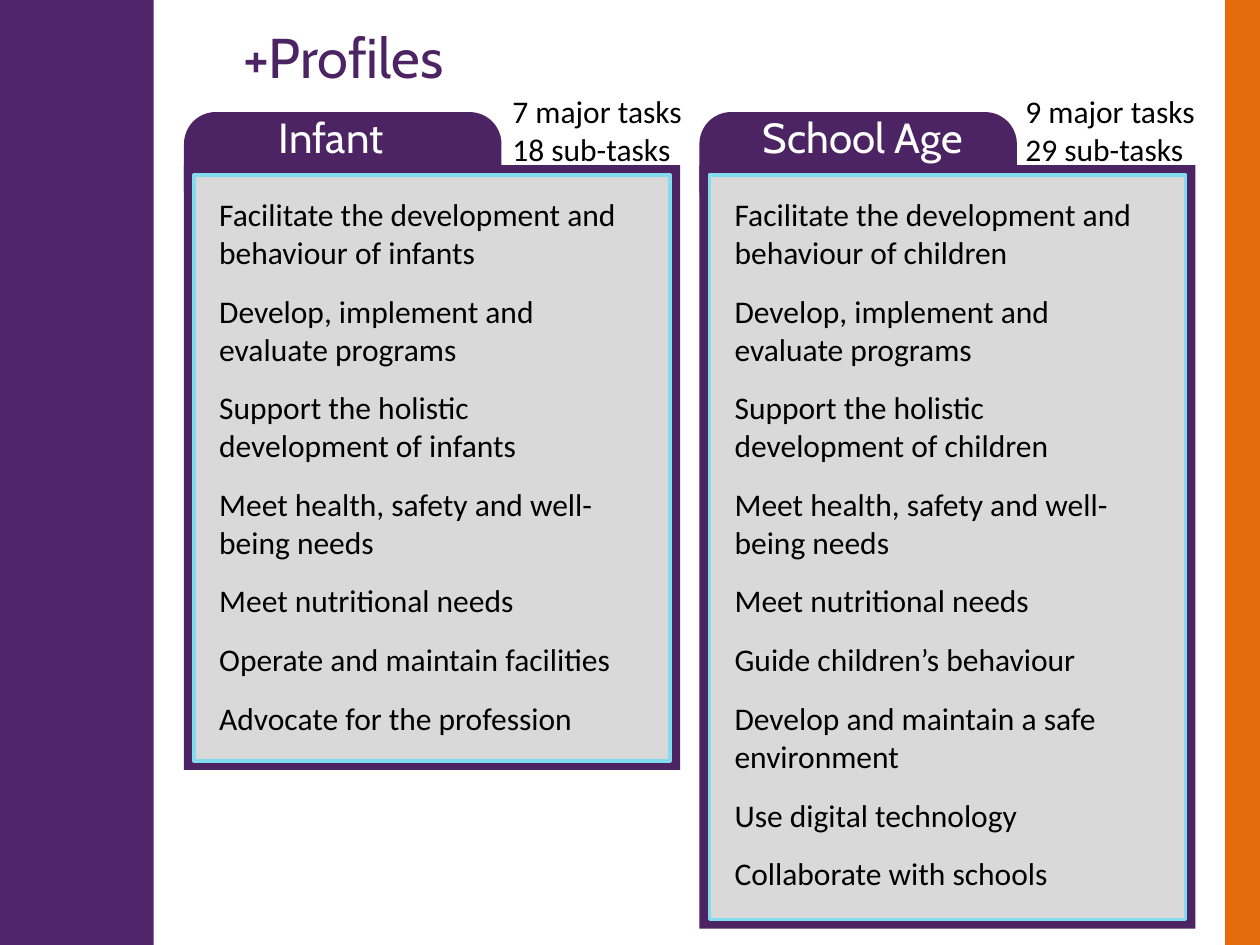
from dataclasses import dataclass

from pptx import Presentation
from pptx.dml.color import RGBColor as RGB
from pptx.enum.shapes import MSO_SHAPE as Kind
from pptx.enum.text import MSO_AUTO_SIZE as Fit, PP_ALIGN as Align
from pptx.util import Cm, Pt


@dataclass(frozen=True)
class Theme:
    plum: str = "4C2363"
    side: str = "512569"
    edge: str = "E46C0A"
    grey: str = "D9D9D9"
    aqua: str = "82DCEE"
    ink: str = "000000"
    white: str = "FFFFFF"
    head: str = "Cabin"
    body: str = "Calibri"
    big: int = 32
    mid: int = 24
    small: int = 18


THEME = Theme()

# x: card left; h: panel height; shift: heading offset; gap: note offset (cm)
CARDS = [
    dict(x=3.71, h=12.19, shift=0.56, gap=6.37, name="Infant ",
         note=["7 major tasks", "18 sub-tasks"],
         tasks=["Facilitate the development and behaviour of infants",
                "Develop, implement and evaluate programs",
                "Support the holistic development of infants",
                "Meet health, safety and well-being needs",
                "Meet nutritional needs",
                "Operate and maintain facilities",
                "Advocate for the profession"]),
    dict(x=14.1, h=15.39, shift=0.79, gap=6.32, name="School Age",
         note=["9 major tasks", "29 sub-tasks"],
         tasks=["Facilitate the development and behaviour of children",
                "Develop, implement and evaluate programs",
                "Support the holistic development of children",
                "Meet health, safety and well-being needs",
                "Meet nutritional needs",
                "Guide children’s behaviour",
                "Develop and maintain a safe environment",
                "Use digital technology",
                "Collaborate with schools"]),
]


def block(slide, x, y, w, h, fill, kind=Kind.RECTANGLE, line=None):
    shape = slide.shapes.add_shape(kind, Cm(x), Cm(y), Cm(w), Cm(h))
    shape.shadow.inherit = False
    shape.fill.solid()
    shape.fill.fore_color.rgb = RGB.from_string(fill)
    if line:
        shape.line.color.rgb = RGB.from_string(line)
        shape.line.width = Pt(2)
    else:
        shape.line.fill.background()
    return shape


def write(slide, x, y, w, h, lines, font=THEME.body, size=THEME.small,
          color=THEME.ink, align=None, after=None):
    box = slide.shapes.add_textbox(Cm(x), Cm(y), Cm(w), Cm(h))
    frame = box.text_frame
    frame.word_wrap = True
    frame.auto_size = Fit.SHAPE_TO_FIT_TEXT
    for i, text in enumerate(lines):
        para = frame.add_paragraph() if i else frame.paragraphs[0]
        if align is not None:
            para.alignment = align
        if after is not None:
            para.space_after = Pt(after)
        run = para.add_run()
        run.text = text
        run.font.name = font
        run.font.size = Pt(size)
        run.font.color.rgb = RGB.from_string(color)


def card(slide, x, h, shift, gap, name, note, tasks):
    # Tab behind the panel
    tab = block(slide, x, 2.26, 6.4, 2.21, THEME.plum, Kind.ROUNDED_RECTANGLE)
    tab.adjustments[0] = 0.29
    # Panel with its framed inside
    block(slide, x, 3.33, 10, h, THEME.plum)
    block(slide, x + 0.2, 3.53, 9.6, h - 0.38, THEME.grey, line=THEME.aqua)
    # Heading, tasks and counts
    write(slide, x + shift, 2.13, 5, 1.27, [name], font=THEME.head,
          size=THEME.mid, color=THEME.white, align=Align.CENTER)
    write(slide, x + 0.46, 3.81, 9, h - 0.92, tasks, after=12)
    write(slide, x + gap, 1.73, 4.6, 1.8, note)


def main():
    deck = Presentation()
    deck.slide_width, deck.slide_height = Cm(25.4), Cm(19.05)
    slide = deck.slides.add_slide(deck.slide_layouts[6])

    # Side bars
    block(slide, 24.7, 0, 0.7, 19.05, THEME.edge)
    block(slide, 0, 0, 3.1, 19.05, THEME.side)

    # Title
    write(slide, 4.65, 0.33, 14.66, 1.63, ["+Profiles"], font=THEME.head,
          size=THEME.big, color=THEME.plum)

    # Profile cards
    for data in CARDS:
        card(slide, **data)

    deck.save("out.pptx")


if __name__ == "__main__":
    main()
